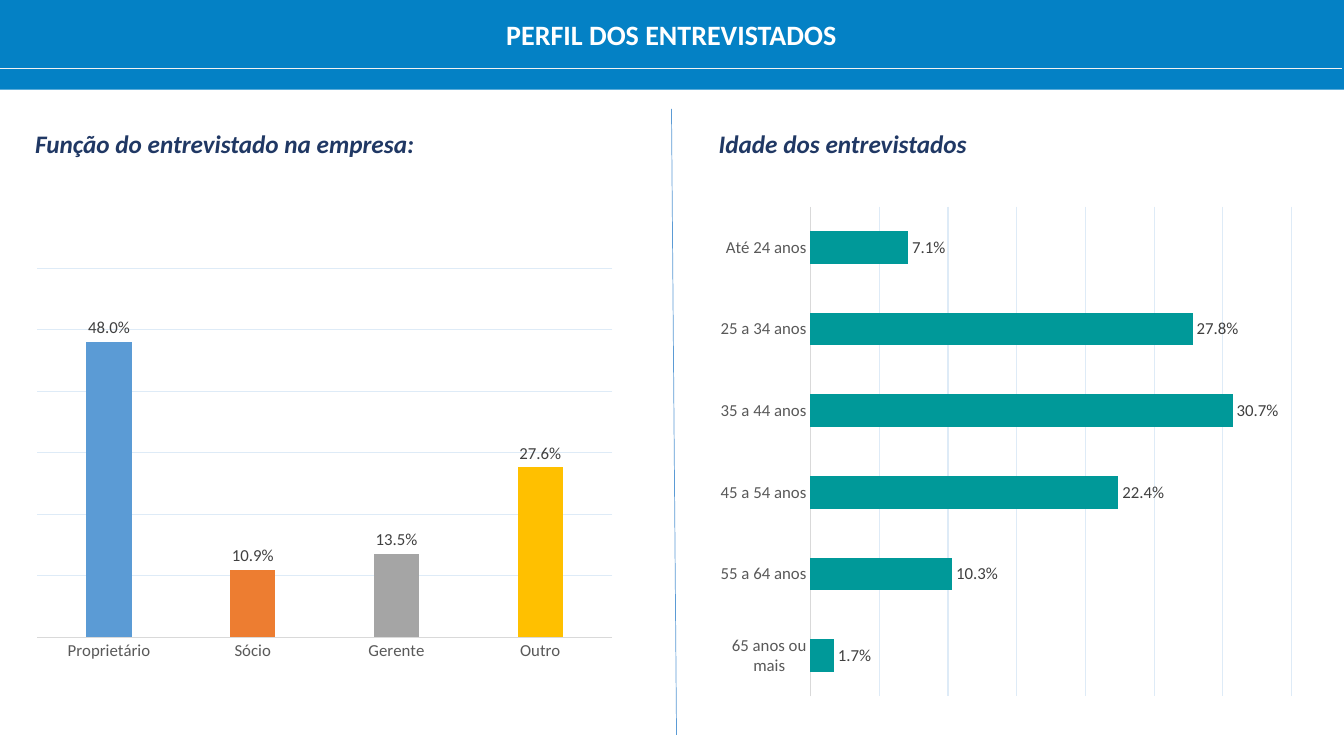
from pptx import Presentation
from pptx.chart.data import CategoryChartData as Data
from pptx.dml.color import RGBColor
from pptx.enum.chart import XL_CHART_TYPE as Kind, XL_LABEL_POSITION as Spot, XL_TICK_MARK as Tick
from pptx.enum.shapes import MSO_CONNECTOR as Link, MSO_SHAPE as Shape
from pptx.enum.text import PP_ALIGN as Align
from pptx.oxml.ns import qn
from pptx.util import Inches, Pt
from lxml import etree

ROLES = {"Proprietário": 0.48, "Sócio": 0.109, "Gerente": 0.135, "Outro": 0.276}
AGES = {"Até 24 anos": 0.071, "25 a 34 anos": 0.278, "35 a 44 anos": 0.307,
        "45 a 54 anos": 0.224, "55 a 64 anos": 0.103, "65 anos ou mais": 0.017}


def paint(fmt, color):
    fmt.solid()
    fmt.fore_color.rgb = RGBColor.from_string(color)


def stroke(line, color, width):
    paint(line.fill, color)
    line.width = Pt(width)


def style(font, size, color, bold=False, italic=False):
    font.name = "Calibri"
    font.size = Pt(size)
    font.bold = bold
    font.italic = italic
    font.color.rgb = RGBColor.from_string(color)


def rule(slide, start, end, color, width):
    ends = [Inches(n) for n in start + end]
    line = slide.shapes.add_connector(Link.STRAIGHT, *ends)
    stroke(line.line, color, width)
    etree.SubElement(line._element.spPr, qn("a:effectLst"))


def label(slide, box, text, size, color, align=Align.LEFT, italic=False):
    frame = slide.shapes.add_textbox(*[Inches(n) for n in box]).text_frame
    frame.word_wrap = True
    frame.text = text
    para = frame.paragraphs[0]
    para.alignment = align
    style(para.runs[0].font, size, color, True, italic)


def banner(slide, box, text):
    left, top, width, height = box
    bar = slide.shapes.add_shape(Shape.RECTANGLE, *[Inches(n) for n in box])
    bar.shadow.inherit = False
    paint(bar.fill, "0481C5")
    bar.line.fill.background()
    label(slide, (left, top + 0.12, width, 0.44), text, 20, "FFFFFF", Align.CENTER)
    rule(slide, (left - 0.02, top + 0.68), (left + width - 0.02, top + 0.68), "F2F2F2", 1)


def graph(slide, box, kind, values, peak, step, gap, lap, colors):
    data = Data(number_format="0.0%")
    data.categories = list(values)
    data.add_series("Series 1", list(values.values()))
    chart = slide.shapes.add_chart(kind, *[Inches(n) for n in box], data).chart
    chart.has_legend = chart.has_title = False
    style(chart.font, 10, "000000")

    cats = chart.category_axis
    cats.major_tick_mark = cats.minor_tick_mark = Tick.NONE
    cats.reverse_order = kind == Kind.BAR_CLUSTERED
    cats.has_major_gridlines = False
    style(cats.tick_labels.font, 12, "595959")
    stroke(cats.format.line, "D9D9D9", 0.75)

    scale = chart.value_axis
    scale.visible = False
    scale.minimum_scale, scale.maximum_scale, scale.major_unit = 0, peak, step
    scale.has_major_gridlines = True
    stroke(scale.major_gridlines.format.line, "DEEBF7", 0.75)

    plot = chart.plots[0]
    plot.vary_by_categories = False
    plot.gap_width, plot.overlap = gap, lap
    series = plot.series[0]
    series.invert_if_negative = False
    paint(series.format.fill, colors[0])
    if len(colors) > 1:
        for i, color in enumerate(colors):
            paint(series.points[i].format.fill, color)

    tags = series.data_labels
    tags.show_value = True
    tags.position = Spot.OUTSIDE_END
    tags.number_format = "0.0%"
    tags.number_format_is_linked = False
    style(tags.font, 12, "404040")


def panel(slide, box, title, drop, *chart):
    left, top, width, height = box
    label(slide, (left, top, 4.16, 0.4), title, 18, "203864", italic=True)
    graph(slide, (left, top + drop, width, height - drop), *chart)


def main():
    deck = Presentation()
    deck.slide_width, deck.slide_height = Inches(13.33), Inches(7.5)
    slide = deck.slides.add_slide(deck.slide_layouts[6])
    banner(slide, (-0.01, 0, 13.34, 0.89), "PERFIL DOS ENTREVISTADOS")
    rule(slide, (6.66, 1.08), (6.71, 7.29), "5B9BD5", 0.5)
    panel(slide, (0.25, 1.22, 5.94, 5.42), "Função do entrevistado na empresa:", 1.36,
          Kind.COLUMN_CLUSTERED, ROLES, 0.6, 0.1, 219, -27,
          ["5B9BD5", "ED7D31", "A5A5A5", "FFC000"])
    panel(slide, (7.03, 1.22, 5.9, 5.79), "Idade dos entrevistados", 0.73,
          Kind.BAR_CLUSTERED, AGES, 0.35, 0.05, 151, 0, ["009999"])
    deck.save("out.pptx")


if __name__ == "__main__":
    main()
